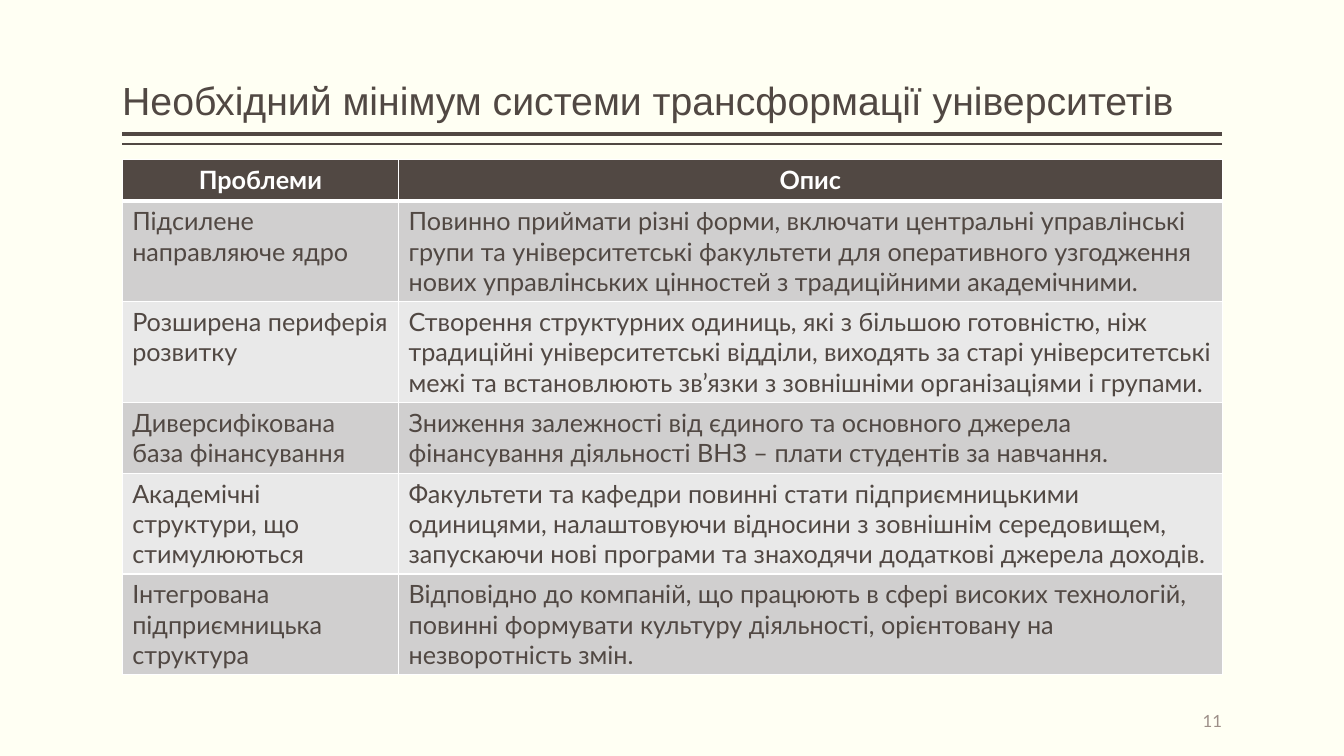
from dataclasses import dataclass

from lxml.etree import SubElement
from pptx import Presentation
from pptx.dml.color import RGBColor
from pptx.enum.shapes import MSO_CONNECTOR
from pptx.enum.text import MSO_ANCHOR, MSO_AUTO_SIZE, PP_ALIGN
from pptx.oxml.ns import qn
from pptx.util import Pt

CREAM = RGBColor(0xFF, 0xFF, 0xF3)
BROWN = RGBColor(0x51, 0x48, 0x43)
TAUPE = RGBColor(0x9D, 0x8F, 0x88)
WHITE = RGBColor(0xFF, 0xFF, 0xFF)
DARK_BAND = RGBColor(0xD0, 0xCF, 0xCF)
LIGHT_BAND = RGBColor(0xE9, 0xE9, 0xE9)

LEFT, WIDTH = 87.3, 785.7
RIGHT = LEFT + WIDTH
PROBLEM_WIDTH = 197.4
ROW_HEIGHT = 29.5


@dataclass
class Rule:
    y: float
    weight: float


@dataclass
class Requirement:
    problem: str
    description: str


RULES = [Rule(95.9, 3), Rule(102.9, 1)]
HEADER = Requirement("Проблеми", "Опис")
REQUIREMENTS = [
    Requirement(
        "Підсилене направляюче ядро",
        "Повинно приймати різні форми, включати центральні управлінські групи та "
        "університетські факультети для оперативного узгодження нових управлінських "
        "цінностей з традиційними академічними."),
    Requirement(
        "Розширена периферія розвитку",
        "Створення структурних одиниць, які з більшою готовністю, ніж традиційні "
        "університетські відділи, виходять за старі університетські межі та "
        "встановлюють зв’язки з зовнішніми організаціями і групами."),
    Requirement(
        "Диверсифікована база фінансування",
        "Зниження залежності від єдиного та основного джерела фінансування "
        "діяльності ВНЗ – плати студентів за навчання."),
    Requirement(
        "Академічні структури, що стимулюються",
        "Факультети та кафедри повинні стати підприємницькими одиницями, "
        "налаштовуючи відносини з зовнішнім середовищем, запускаючи нові програми "
        "та знаходячи додаткові джерела доходів."),
    Requirement(
        "Інтегрована підприємницька структура",
        "Відповідно до компаній, що працюють в сфері високих технологій, повинні "
        "формувати культуру діяльності, орієнтовану на незворотність змін."),
]


def place(shape, left: float, top: float, width: float, height: float) -> None:
    shape.left, shape.top = Pt(left), Pt(top)
    shape.width, shape.height = Pt(width), Pt(height)


def format_text(paragraph, font_name: str, size: float, color: RGBColor,
                align: PP_ALIGN = PP_ALIGN.LEFT, bold: bool = False) -> None:
    paragraph.alignment = align
    for run in paragraph.runs:
        run.font.name = font_name
        run.font.size = Pt(size)
        run.font.bold = bold
        run.font.color.rgb = color


def set_frame(frame, anchor: MSO_ANCHOR) -> None:
    """Wrap text in a fixed frame with no side insets."""
    frame.word_wrap = True
    frame.auto_size = MSO_AUTO_SIZE.NONE
    frame.vertical_anchor = anchor
    frame.margin_left = frame.margin_right = 0
    frame.margin_top = frame.margin_bottom = Pt(3.6)


def add_rule(slide, rule: Rule) -> None:
    line = slide.shapes.add_connector(
        MSO_CONNECTOR.STRAIGHT, Pt(RIGHT), Pt(rule.y), Pt(LEFT), Pt(rule.y))
    line.line.color.rgb = BROWN
    line.line.width = Pt(rule.weight)
    SubElement(line._element.spPr, qn("a:effectLst"))


def add_borders(cell, top: float, bottom: float) -> None:
    properties = cell._tc.get_or_add_tcPr()
    for side, weight in (("L", 1), ("R", 1), ("T", top), ("B", bottom)):
        border = SubElement(properties, qn(f"a:ln{side}"), w=str(Pt(weight)))
        fill = SubElement(border, qn("a:solidFill"))
        SubElement(fill, qn("a:srgbClr"), val=str(WHITE))


def fill_row(table, index: int, entry: Requirement) -> None:
    is_header = index == 0
    band = BROWN if is_header else DARK_BAND if index % 2 else LIGHT_BAND
    table.rows[index].height = Pt(ROW_HEIGHT)
    for cell, text in zip(table.rows[index].cells, (entry.problem, entry.description)):
        add_borders(cell, 3 if index == 1 else 1, 3 if is_header else 1)
        cell.fill.solid()
        cell.fill.fore_color.rgb = band
        cell.text_frame.text = text
        format_text(cell.text_frame.paragraphs[0], "Lato", 18,
                    WHITE if is_header else BROWN,
                    PP_ALIGN.CENTER if is_header else PP_ALIGN.LEFT, is_header)


def add_requirements_table(slide) -> None:
    entries = [HEADER, *REQUIREMENTS]
    table = slide.shapes.add_table(
        len(entries), 2, Pt(LEFT), Pt(114), Pt(WIDTH),
        Pt(ROW_HEIGHT * len(entries))).table
    table.columns[0].width = Pt(PROBLEM_WIDTH)
    table.columns[1].width = Pt(WIDTH - PROBLEM_WIDTH)
    for index, entry in enumerate(entries):
        fill_row(table, index, entry)


def add_title(slide) -> None:
    title = slide.shapes.title
    place(title, LEFT, 5.9, WIDTH, 86.4)
    set_frame(title.text_frame, MSO_ANCHOR.BOTTOM)
    title.text_frame.text = "Необхідний мінімум системи трансформації університетів"
    heading = title.text_frame.paragraphs[0]
    heading.line_spacing = 0.9
    format_text(heading, "Arial", 28, BROWN)


def add_page_number(slide) -> None:
    frame = slide.shapes.add_textbox(
        Pt(RIGHT - 144), Pt(500.4), Pt(144), Pt(28.8)).text_frame
    set_frame(frame, MSO_ANCHOR.MIDDLE)
    frame.text = "11"
    format_text(frame.paragraphs[0], "Lato", 12, TAUPE, PP_ALIGN.RIGHT)


def main() -> None:
    deck = Presentation()
    deck.slide_width, deck.slide_height = Pt(960), Pt(540)
    slide = deck.slides.add_slide(deck.slide_layouts.get_by_name("Title Only"))
    slide.background.fill.solid()
    slide.background.fill.fore_color.rgb = CREAM
    for rule in RULES:
        add_rule(slide, rule)
    add_title(slide)
    add_page_number(slide)
    add_requirements_table(slide)
    deck.save("out.pptx")


if __name__ == "__main__":
    main()
